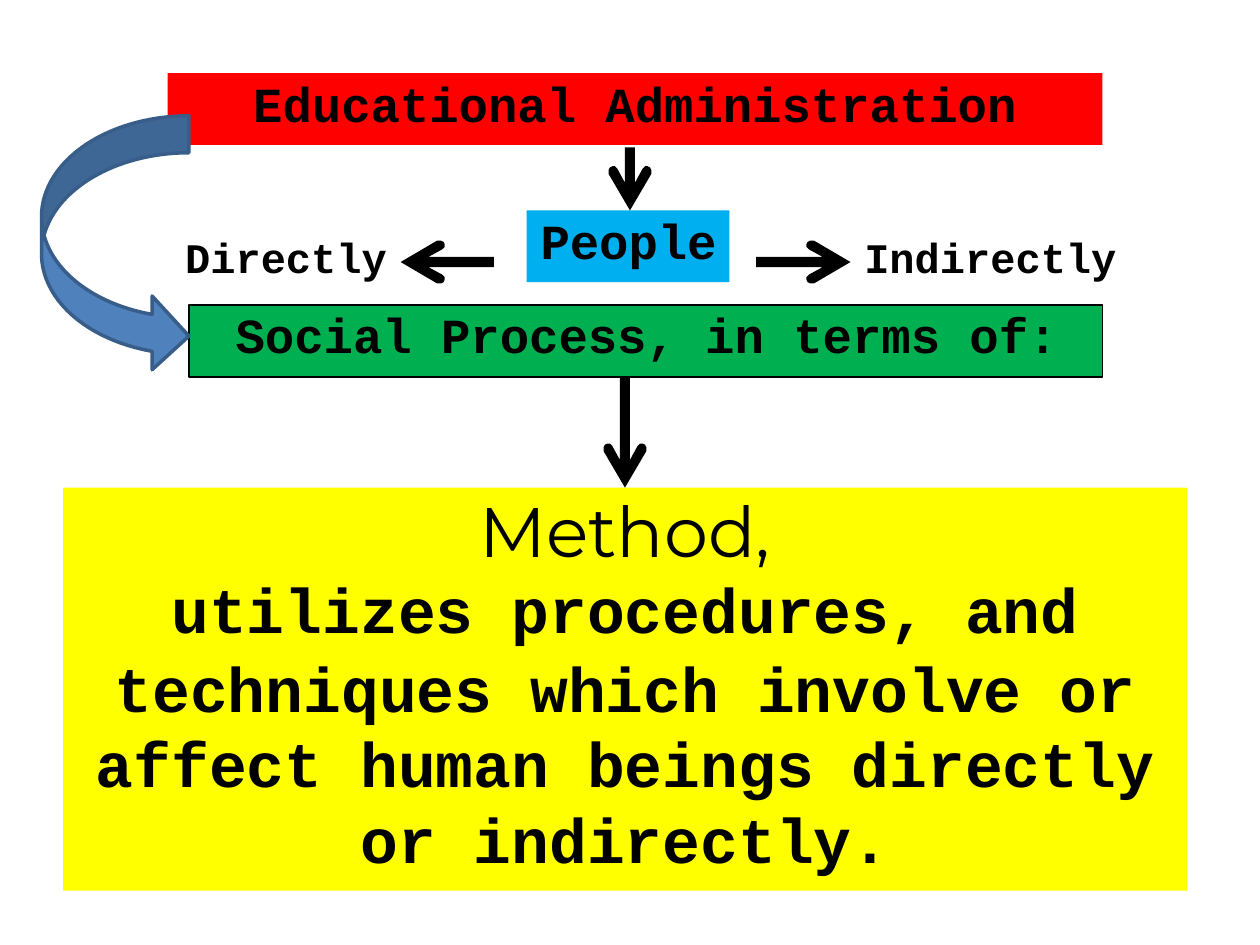
from lxml import etree
from pptx import Presentation
from pptx.dml.color import RGBColor
from pptx.enum.shapes import MSO_SHAPE as SHAPE
from pptx.enum.text import MSO_ANCHOR as ANCHOR, MSO_AUTO_SIZE as AUTO, PP_ALIGN as ALIGN
from pptx.oxml.ns import qn
from pptx.util import Inches, Pt

COLORS = {
    "black": "000000", "red": "FF0000", "cyan": "00AFEF", "green": "00AF50",
    "yellow": "FFFF00", "blue": "4F81BC", "navy": "385D89",
}
MONO = "Courier New"
# Half of an arrowhead: distance back from the tip, distance from the axis
BARB = [(0.29, 0.17), (0.32, 0.17), (0.34, 0.16), (0.35, 0.14),
        (0.35, 0.12), (0.33, 0.1), (0.22, 0.04)]


class FlowSlide:
    def __init__(self, prs):
        self.slide = prs.slides.add_slide(prs.slide_layouts[5])
        self.shapes = self.slide.shapes

    def paint(self, s, fill, line=None, weight=1):
        s.shadow.inherit = False
        s.fill.solid()
        s.fill.fore_color.rgb = RGBColor.from_string(COLORS[fill])
        if line:
            s.line.color.rgb = RGBColor.from_string(COLORS[line])
            s.line.width = Pt(weight)
        else:
            s.line.fill.background()

    def shape(self, kind, box, fill, line=None, weight=1):
        s = self.shapes.add_shape(kind, *map(Inches, box))
        self.paint(s, fill, line, weight)
        return s

    def frame(self, s, left=0.01, top=0.01):
        tf = s.text_frame
        tf.word_wrap = True
        tf.auto_size = AUTO.NONE
        tf.vertical_anchor = ANCHOR.TOP
        tf.margin_left, tf.margin_top = Inches(left), Inches(top)
        tf.margin_right = tf.margin_bottom = 0
        return tf

    def set_text(self, p, text, size, font=MONO, bold=True, align=ALIGN.LEFT):
        p.text = text
        p.alignment = align
        p.font.name, p.font.size, p.font.bold = font, Pt(size), bold
        p.font.color.rgb = RGBColor.from_string(COLORS["black"])

    def title(self, text, box):
        s = self.shapes.title
        s.left, s.top, s.width, s.height = map(Inches, box)
        self.set_text(self.frame(s).paragraphs[0], text, 28)
        self.shapes._spTree.append(s._element)  # in front of its bar

    def label(self, text, box, fill, indent, line=None):
        s = self.shape(SHAPE.RECTANGLE, box, fill, line)
        self.set_text(self.frame(s, indent, 0).paragraphs[0], text, 28)

    def textbox(self, box, left=0.01):
        return self.frame(self.shapes.add_textbox(*map(Inches, box)), left)

    def tabbed(self, text, box, tab):
        p = self.textbox(box).paragraphs[0]
        tabs = etree.SubElement(p._p.get_or_add_pPr(), qn("a:tabLst"))
        etree.SubElement(tabs, qn("a:tab"), pos=str(Inches(tab)), algn="l")
        self.set_text(p, text, 24)

    def arrow(self, tip, length, direction):
        half = BARB + [(length, 0.04)]
        outline = [(0, 0)] + half + [(back, -side) for back, side in reversed(half)]
        (x, y), (dx, dy) = tip, direction
        points = [(Inches(x - back * dx - side * dy), Inches(y - back * dy + side * dx))
                  for back, side in outline]
        builder = self.shapes.build_freeform(*points[0])
        builder.add_line_segments(points[1:], close=True)
        self.paint(builder.convert_to_shape(), "black")


def main():
    prs = Presentation()
    prs.slide_width, prs.slide_height = Inches(10), Inches(7.5)
    flow = FlowSlide(prs)

    # Heading and the boxes below it
    flow.shape(SHAPE.RECTANGLE, (1.33, 0.58, 7.42, 0.57), "red")
    flow.title("Educational Administration", (2, 0.57, 6.2, 0.49))
    flow.label("People", (4.18, 1.67, 1.61, 0.57), "cyan", 0.11)
    flow.label("Social Process, in terms of:", (1.5, 2.42, 7.25, 0.57), "green", 0.37, "black")
    flow.tabbed("Directly\tIndirectly", (1.46, 1.83, 7.5, 0.43), 5.39)

    # Method panel
    flow.shape(SHAPE.RECTANGLE, (0.5, 3.87, 8.92, 3.2), "yellow")
    tf = flow.textbox((0.74, 3.87, 8.44, 3.07), 0)
    p = tf.paragraphs[0]
    flow.set_text(p, "Method,", 40, "Montserrat", False, ALIGN.CENTER)
    p.line_spacing = Pt(47.2)
    for text, spacing, before in (
        ("utilizes procedures, and", 42.4, 0),
        ("techniques which involve or affect human beings directly or indirectly.", 43.2, 2),
    ):
        p = tf.add_paragraph()
        flow.set_text(p, text, 36, align=ALIGN.CENTER)
        p.line_spacing, p.space_before = Pt(spacing), Pt(before)

    # Arrows
    down, left, right = (0, 1), (-1, 0), (1, 0)
    flow.arrow((5, 1.67), 0.5, down)
    flow.arrow((3.18, 2.08), 0.74, left)
    flow.arrow((6.75, 2.08), 0.75, right)
    flow.arrow((4.96, 3.87), 0.88, down)
    flow.shape(SHAPE.CURVED_RIGHT_ARROW, (0.33, 0.92, 1.17, 2.04), "blue", "navy", 2)

    prs.save("out.pptx")


if __name__ == "__main__":
    main()
